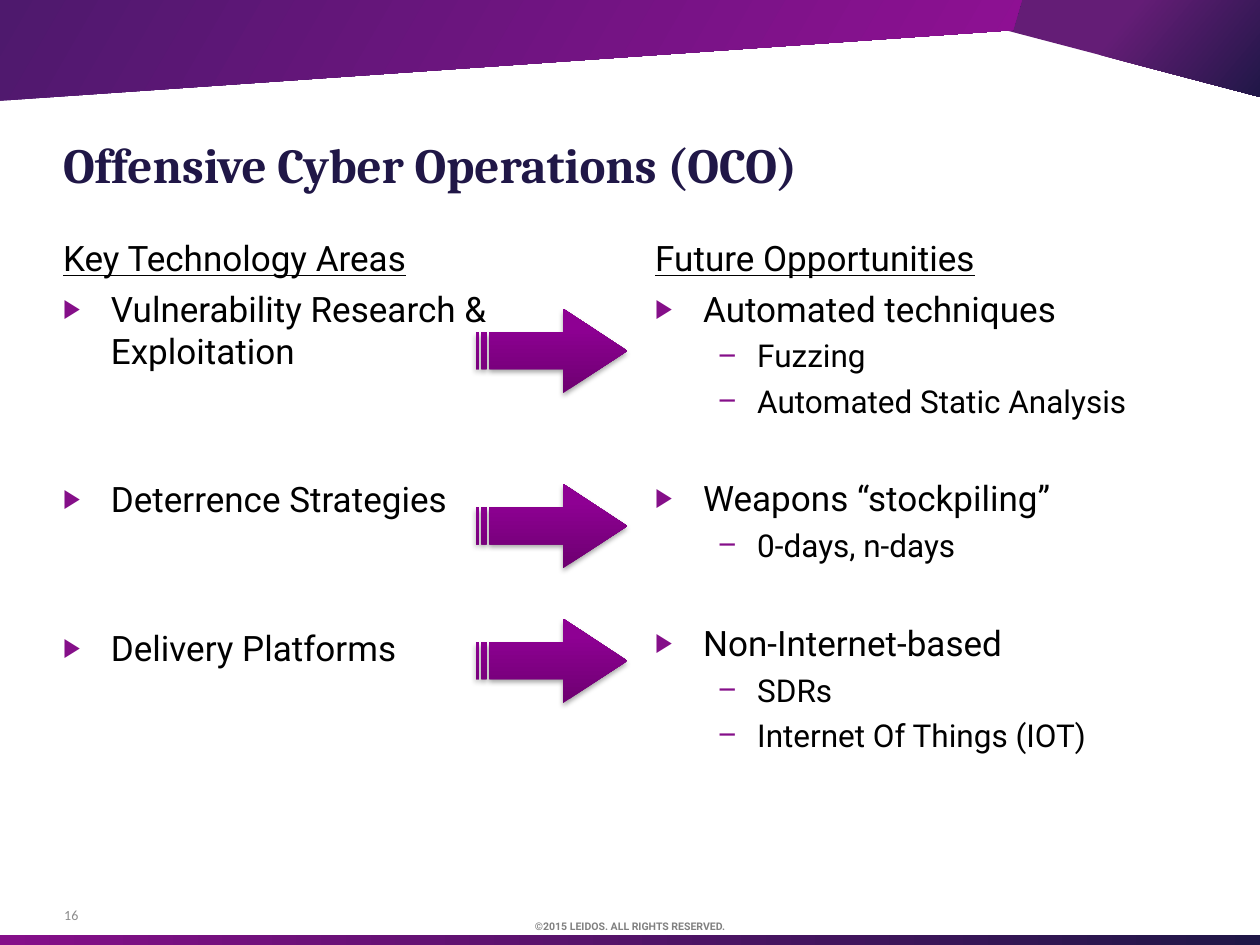
from lxml.etree import SubElement
from pptx import Presentation
from pptx.dml.color import RGBColor
from pptx.enum.shapes import MSO_SHAPE
from pptx.enum.text import MSO_ANCHOR, MSO_AUTO_SIZE, PP_ALIGN
from pptx.oxml.ns import qn
from pptx.util import Inches, Pt

NAVY = RGBColor(0x20, 0x17, 0x47)
PURPLE = RGBColor(0x85, 0x0F, 0x89)
PLUM = RGBColor(0x64, 0x1D, 0x76)
INDIGO = RGBColor(0x4E, 0x19, 0x6D)
MAGENTA = RGBColor(0x90, 0x10, 0x94)
ARROW_DARK = RGBColor(0x6E, 0x00, 0x71)
ARROW_LIGHT = RGBColor(0x8E, 0x00, 0x93)
BLACK = RGBColor(0, 0, 0)
COPYRIGHT_GRAY = RGBColor(0x80, 0x80, 0x80)
NUMBER_GRAY = RGBColor(0x8C, 0x8C, 0x8C)

SKIPPED_LINE = 28.1
LEVELS = [
    {"size": 20, "indent": 0.38, "hang": 0.38, "bullet": "▶", "scale": 75, "before": 4.7},
    {"size": 18, "indent": 0.81, "hang": 0.31, "bullet": "−", "scale": 100, "before": 4.2},
]
TECHNOLOGY_AREAS = [
    (0, 0, "Vulnerability Research & Exploitation"),
    (0, 2, "Deterrence Strategies"),
    (0, 2, "Delivery Platforms"),
]
OPPORTUNITIES = [
    (0, 0, "Automated techniques"),
    (1, 0, "Fuzzing"),
    (1, 0, "Automated Static Analysis"),
    (0, 1, "Weapons “stockpiling”"),
    (1, 0, "0-days, n-days"),
    (0, 1, "Non-Internet-based"),
    (1, 0, "SDRs"),
    (1, 0, "Internet Of Things (IOT)"),
]


def place(shape, box):
    """Move a shape to a left, top, width, height box in inches."""
    shape.left, shape.top, shape.width, shape.height = map(Inches, box)


def paint(shape, stops, clockwise_angle):
    """Give a shape a two-stop gradient, no outline and no shadow."""
    shape.shadow.inherit = False
    shape.line.fill.background()
    shape.fill.gradient()
    shape.fill.gradient_angle = (360 - clockwise_angle) % 360
    for stop, (position, color) in zip(shape.fill.gradient_stops, stops):
        stop.position = position
        stop.color.rgb = color


def add_run(paragraph, text, font, size, color, bold=False, underline=False):
    """Append one formatted run."""
    run = paragraph.add_run()
    run.text = text
    run.font.name = font
    run.font.size = Pt(size)
    run.font.color.rgb = color
    run.font.bold = bold
    run.font.underline = underline


def frame_text(shape, box, anchor, right_inset):
    """Place a text shape and return its prepared frame."""
    place(shape, box)
    frame = shape.text_frame
    frame.word_wrap = True
    frame.auto_size = MSO_AUTO_SIZE.NONE
    frame.vertical_anchor = anchor
    frame.margin_left, frame.margin_right = 0, Inches(right_inset)
    frame.margin_top = frame.margin_bottom = Inches(0.05)
    return frame


def set_bullet(paragraph, style=None):
    """Set a paragraph's hanging bullet, or clear it without a style."""
    properties = paragraph._p.get_or_add_pPr()
    if style is None:
        properties.set("marL", "0")
        properties.set("indent", "0")
        SubElement(properties, qn("a:buNone"))
        return
    properties.set("marL", str(Inches(style["indent"])))
    properties.set("indent", str(-Inches(style["hang"])))
    color = SubElement(properties, qn("a:buClr"))
    SubElement(color, qn("a:srgbClr"), val=str(PURPLE))
    SubElement(properties, qn("a:buSzPct"), val=str(style["scale"] * 1000))
    SubElement(properties, qn("a:buFont"), typeface="Arial")
    SubElement(properties, qn("a:buChar"), char=style["bullet"])


def add_polygon(slide, points, stops, angle):
    """Draw a closed gradient polygon through points in inches."""
    corners = [(Inches(x), Inches(y)) for x, y in points]
    builder = slide.shapes.build_freeform(*corners[0])
    builder.add_line_segments(corners[1:], close=True)
    paint(builder.convert_to_shape(), stops, angle)


def add_banner(slide, box):
    """Draw the two folded bands across the top."""
    left, top, width, height = box
    right, bottom, fold = left + width, top + height, top + 0.24
    add_polygon(slide, [(8.06, top), (right, top), (right, bottom - 0.03), (7.98, fold)],
                [(0.4, PLUM), (1, NAVY)], 40)
    add_polygon(slide, [(left, bottom), (left, top), (8.11, top), (8.04, fold)],
                [(0, INDIGO), (1, MAGENTA)], 30)


def add_footer(slide, box):
    """Draw the bottom bar, copyright line and slide number."""
    left, top, width, height = box
    bar = slide.shapes.add_shape(MSO_SHAPE.RECTANGLE, 0, 0, 0, 0)
    place(bar, (left, top + height - 0.08, width, 0.08))
    paint(bar, [(0, PURPLE), (1, NAVY)], 0)

    notice = slide.shapes.add_textbox(0, 0, 0, 0)
    frame = frame_text(notice, (left, top + 0.19, width, 0.21), MSO_ANCHOR.TOP, 0)
    frame.paragraphs[0].alignment = PP_ALIGN.CENTER
    add_run(frame.paragraphs[0], "©2015 LEIDOS. ALL RIGHTS RESERVED.",
            "Roboto", 6, COPYRIGHT_GRAY, bold=True)

    number = slide.shapes.add_textbox(0, 0, 0, 0)
    frame = frame_text(number, (left + 0.51, top, 2.33, 0.4), MSO_ANCHOR.MIDDLE, 0)
    add_run(frame.paragraphs[0], "16", "Calibri", 8, NUMBER_GRAY)


def fill_title(title, box, text):
    """Format the title placeholder."""
    heading = frame_text(title, box, MSO_ANCHOR.MIDDLE, 0.1).paragraphs[0]
    heading.alignment = PP_ALIGN.LEFT
    heading.line_spacing = Pt(30)
    add_run(heading, text, "Cambria", 28, NAVY, bold=True)


def fill_column(body, box, heading, items):
    """Fill a body placeholder with an underlined heading and bullets."""
    frame = frame_text(body, box, MSO_ANCHOR.TOP, 0.1)
    first = frame.paragraphs[0]
    set_bullet(first)
    first.space_before = Pt(0)
    add_run(first, heading, "Roboto", 20, BLACK, underline=True)
    for level, skipped, text in items:
        style = LEVELS[level]
        item = frame.add_paragraph()
        item.level = level
        set_bullet(item, style)
        item.space_before = Pt(style["before"] + skipped * SKIPPED_LINE)
        add_run(item, text, "Roboto", style["size"], BLACK)


def add_arrow(slide, box):
    """Draw a striped arrow with a soft shadow below it."""
    arrow = slide.shapes.add_shape(MSO_SHAPE.STRIPED_RIGHT_ARROW, 0, 0, 0, 0)
    place(arrow, box)
    arrow.adjustments[0], arrow.adjustments[1] = 0.435, 0.761
    paint(arrow, [(0, ARROW_DARK), (0.8, ARROW_LIGHT)], 270)
    effects = arrow._element.spPr.find(qn("a:effectLst"))
    shadow = SubElement(effects, qn("a:outerShdw"), blurRad=str(Pt(3.1)),
                        dist=str(Pt(1.8)), dir="5400000", rotWithShape="0")
    color = SubElement(shadow, qn("a:srgbClr"), val=str(BLACK))
    SubElement(color, qn("a:alpha"), val="35000")


def main():
    """Build and save the slide."""
    deck = Presentation()
    deck.slide_width, deck.slide_height = Inches(10), Inches(7.5)
    slide = deck.slides.add_slide(deck.slide_layouts[3])
    title, areas, opportunities = slide.placeholders
    add_banner(slide, (0, 0, 10, 0.8))
    add_footer(slide, (0, 7.06, 10, 0.44))
    fill_title(title, (0.5, 0.81, 9, 1.04), "Offensive Cyber Operations (OCO)")
    fill_column(areas, (0.5, 1.83, 4.3, 4.69), "Key Technology Areas", TECHNOLOGY_AREAS)
    fill_column(opportunities, (5.2, 1.83, 4.3, 4.69), "Future Opportunities", OPPORTUNITIES)
    for top in (2.45, 3.84, 4.91):
        add_arrow(slide, (3.78, top, 1.2, 0.67))
    deck.save("out.pptx")


if __name__ == "__main__":
    main()
